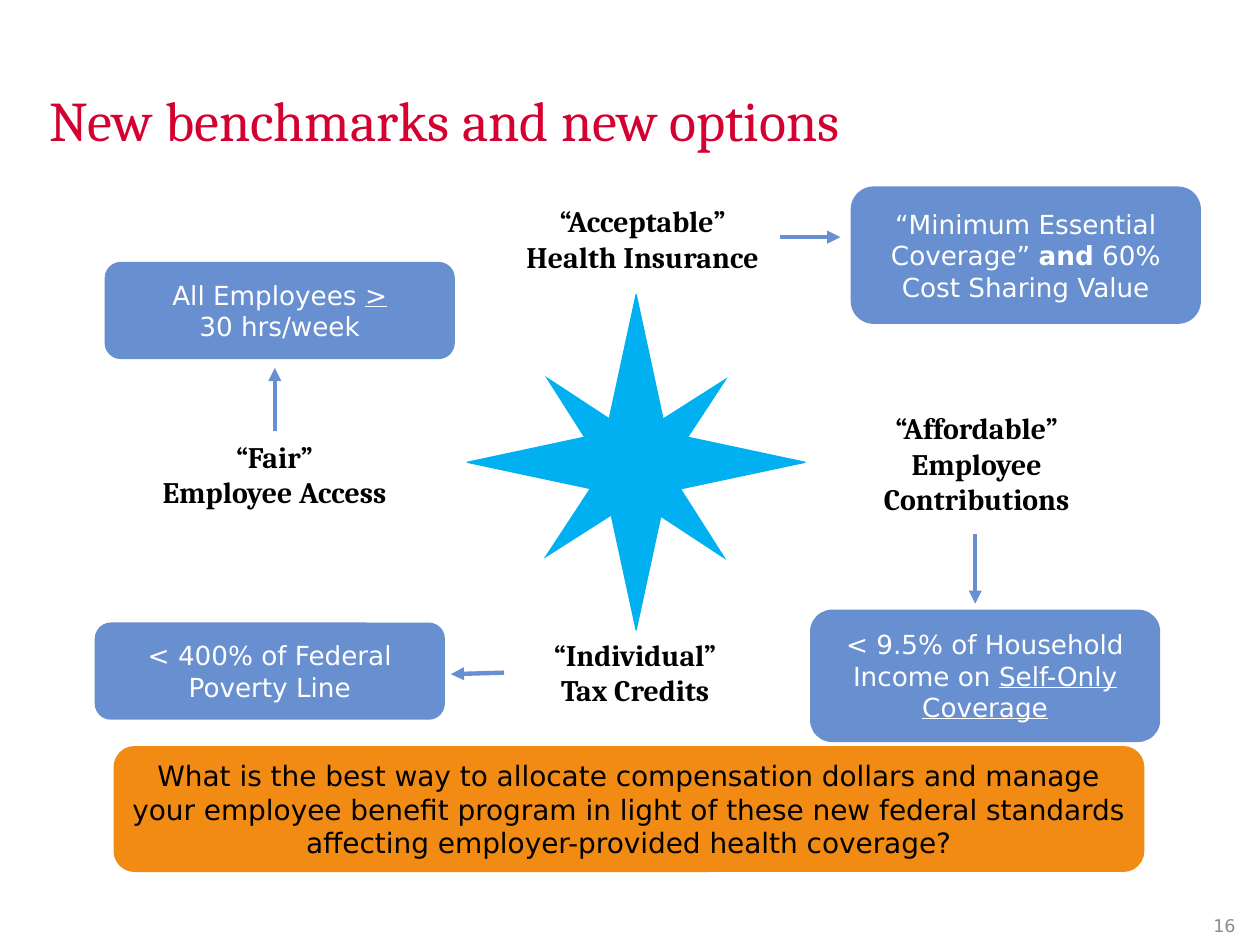
import pptx
import pptx.util
import pptx.dml.color
import pptx.enum.shapes
import pptx.enum.text
import pptx.oxml.ns
from lxml import etree

Cm, Pt = pptx.util.Cm, pptx.util.Pt
KIND = pptx.enum.shapes.MSO_SHAPE
ALIGN = pptx.enum.text.PP_ALIGN
ANCHOR = pptx.enum.text.MSO_ANCHOR

HUES = {"blue": "688FCF", "star": "00B0F0", "orange": "F28B13", "red": "D4002F",
        "gray": "8C8C8C", "white": "FFFFFF", "black": "000000"}
TITLE = {"name": "Cambria", "size": Pt(32), "bold": False}
LABEL = {"name": "Cambria", "size": Pt(17), "bold": True}
BOX = {"name": "DejaVu Sans", "size": Pt(15)}
BANNER = {"name": "DejaVu Sans", "size": Pt(16)}
NUMBER = {"name": "DejaVu Sans", "size": Pt(10)}
BOLD, UNDER = {"bold": True}, {"underline": True}

# Left, top, width, height in cm, then lines of (text, format) runs
LABELS = [
    ((9.68, 3.96, 6.55, 1.73), ["“Acceptable”", "Health Insurance"]),
    ((16.92, 8.13, 5.54, 2.51), ["“Affordable”", "Employee", "Contributions"]),
    ((2.26, 8.71, 6.55, 1.73), ["“Fair”", "Employee Access"]),
    ((9.53, 12.7, 6.55, 1.73), ["“Individual”", "Tax Credits"]),
]
BOXES = [
    ((17.15, 3.76, 7.06, 2.77),
     [[("“Minimum Essential Coverage” ", {}), ("and", BOLD),
       (" 60% Cost Sharing Value", {})]]),
    ((16.33, 12.29, 7.06, 2.67),
     ["< 9.5% of Household",
      [("Income on ", {}), ("Self-Only Coverage", UNDER)]]),
    ((2.11, 5.28, 7.06, 1.96),
     [[("All Employees ", {}), (">", UNDER)], "30 hrs/week"]),
    ((1.91, 12.55, 7.06, 1.96), ["< 400% of Federal Poverty Line"]),
]
QUESTION = ("What is the best way to allocate compensation dollars and manage your "
            "employee benefit program in light of these new federal standards "
            "affecting employer-provided health coverage?")
# Start x, y and tip x, y in cm
ARROWS = [(15.72, 4.78, 16.94, 4.78), (19.66, 10.77, 19.66, 12.17),
          (10.16, 13.56, 9.09, 13.59), (5.54, 8.69, 5.54, 7.42)]


def rgb(hue):
    return pptx.dml.color.RGBColor.from_string(HUES[hue])


def style(thing, form):
    for key, value in form.items():
        setattr(thing, key, value)


def place(shape, spot):
    style(shape, dict(zip(("left", "top", "width", "height"), map(Cm, spot))))


def write(shape, lines, form, hue, align=ALIGN.CENTER, anchor=ANCHOR.MIDDLE,
          side=0.23, edge=0.13):
    frame = shape.text_frame
    style(frame, {"word_wrap": True, "vertical_anchor": anchor,
                  "auto_size": pptx.enum.text.MSO_AUTO_SIZE.NONE,
                  "margin_left": Cm(side), "margin_right": Cm(side),
                  "margin_top": Cm(edge), "margin_bottom": Cm(edge)})
    for i, line in enumerate(lines):
        para = frame.add_paragraph() if i else frame.paragraphs[0]
        para.alignment = align
        for text, extra in [(line, {})] if isinstance(line, str) else line:
            run = para.add_run()
            run.text = text
            style(run.font, {**form, **extra})
            run.font.color.rgb = rgb(hue)


def draw(slide, kind, spot, hue):
    shape = slide.shapes.add_shape(kind, *map(Cm, spot))
    shape.shadow.inherit = False
    shape.fill.solid()
    shape.fill.fore_color.rgb = rgb(hue)
    shape.line.fill.background()
    return shape


def label(slide, spot, lines, form, hue, **opts):
    write(slide.shapes.add_textbox(*map(Cm, spot)), lines, form, hue, **opts)


def arrow(slide, ends):
    line = slide.shapes.add_connector(
        pptx.enum.shapes.MSO_CONNECTOR.STRAIGHT, *map(Cm, ends))
    line.line.color.rgb = rgb("blue")
    line.line.width = Pt(2.5)
    qn = pptx.oxml.ns.qn
    props = line.element.spPr
    etree.SubElement(props.find(qn("a:ln")), qn("a:tailEnd"), type="triangle")
    etree.SubElement(props, qn("a:effectLst"))


def main():
    deck = pptx.Presentation()
    style(deck, {"slide_width": Cm(25.4), "slide_height": Cm(19.05)})
    slide = deck.slides.add_slide(deck.slide_layouts[5])

    # Title and slide number
    title = slide.shapes.title
    place(title, (0.74, 1.52, 23.93, 3.58))
    write(title, ["New benchmarks and new options"], TITLE, "red",
          align=ALIGN.LEFT, anchor=ANCHOR.TOP, side=0.25)
    title.text_frame.paragraphs[0].line_spacing = 1.05
    label(slide, (24.21, 18.26, 1.19, 0.79), ["16"], NUMBER, "gray",
          align=ALIGN.LEFT, side=0.25)

    # Compass star: a small turned star under a large one
    draw(slide, KIND.STAR_4_POINT, (10.21, 6.83, 5.21, 5.21), "star").rotation = 45.4
    star = draw(slide, KIND.STAR_4_POINT, (9.42, 5.94, 6.81, 6.76), "star")
    star.line.color.rgb = rgb("star")
    star.line.width = Pt(0.75)

    # Benchmarks, their options and the arrows between them
    for spot, lines in LABELS:
        label(slide, spot, lines, LABEL, "black", anchor=ANCHOR.TOP)
    for spot, lines in BOXES:
        box = draw(slide, KIND.ROUNDED_RECTANGLE, spot, "blue")
        write(box, lines, BOX, "white", edge=0.23)
    for ends in ARROWS:
        arrow(slide, ends)

    # Closing question
    bar = draw(slide, KIND.ROUNDED_RECTANGLE, (2.29, 15.04, 20.78, 2.54), "orange")
    write(bar, [QUESTION], BANNER, "black")

    deck.save("out.pptx")


if __name__ == "__main__":
    main()
